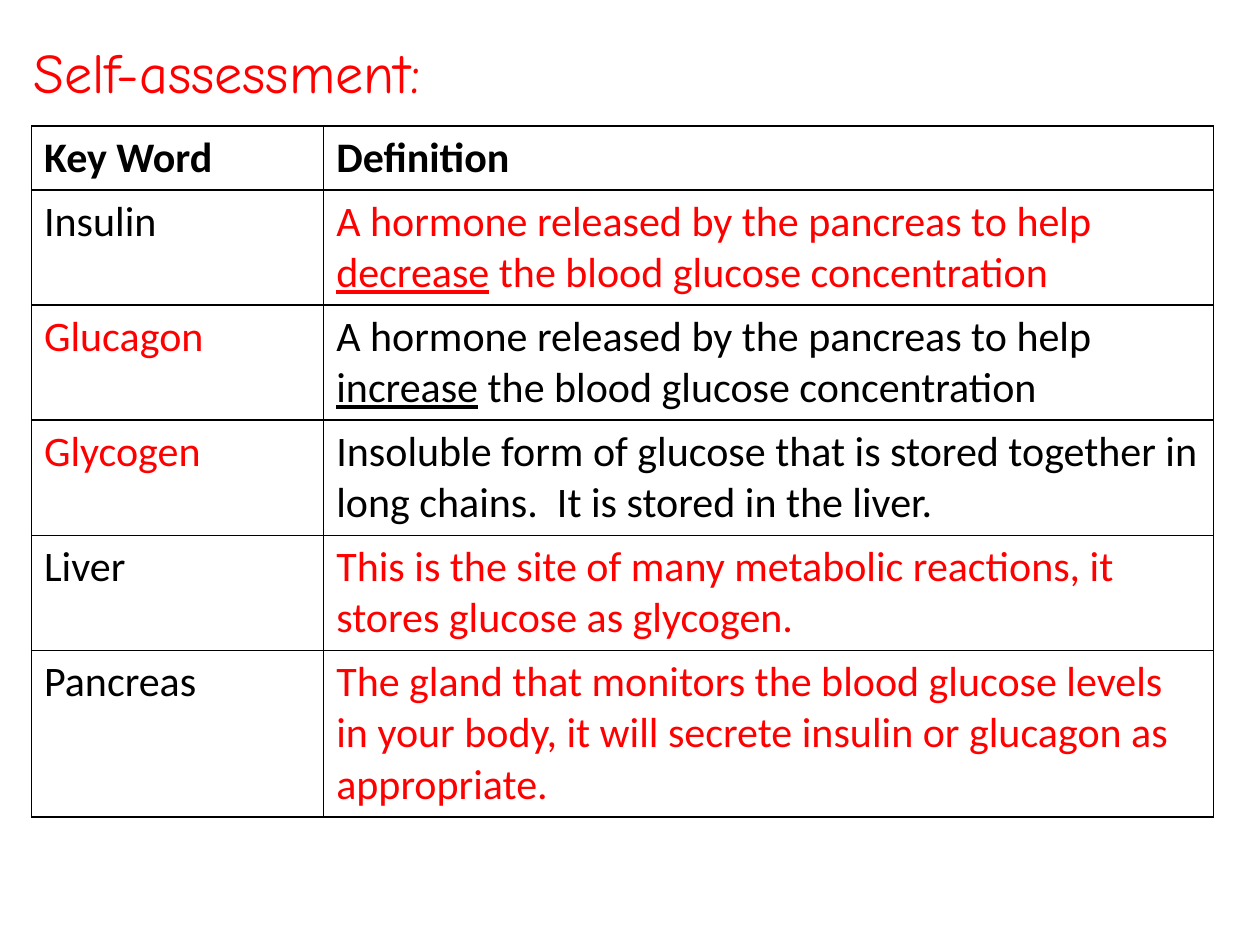
"""Build a self-assessment slide with a table of blood glucose key words."""
import pptx
import pptx.dml.color
import pptx.enum.text
import pptx.oxml
import pptx.oxml.ns
import pptx.util

Pt = pptx.util.Pt

COLOURS = {"given": "000000", "answer": "FF0000", "border": "000000"}
TITLE = "Self-assessment:"
HEADINGS = ("Key Word", "Definition")
ENTRIES = [
    (("given", ["Insulin"]),
     ("answer", ["A hormone released by the pancreas to help ", "decrease",
                 " the blood glucose concentration"])),
    (("answer", ["Glucagon"]),
     ("given", ["A hormone released by the pancreas to help ", "increase",
                " the blood glucose concentration"])),
    (("answer", ["Glycogen"]),
     ("given", ["Insoluble form of glucose that is stored together in long chains.  "
                "It is stored in the liver."])),
    (("given", ["Liver"]),
     ("answer", ["This is the site of many metabolic reactions, "
                 "it stores glucose as glycogen."])),
    (("given", ["Pancreas"]),
     ("answer", ["The gland that monitors the blood glucose levels in your body, "
                 "it will secrete insulin or glucagon as appropriate."])),
]
COLUMN_WIDTHS = (167, 508.5)
ROW_HEIGHTS = (36, 58.3, 58.3, 58.3, 58.3, 82)
TABLE_LEFT, TABLE_TOP = 18, 72


def add_run(paragraph, text, font_name, size, role, bold=False, underline=False):
    run = paragraph.add_run()
    run.text = text
    run.font.name = font_name
    run.font.size = Pt(size)
    run.font.bold = bold
    run.font.underline = underline
    run.font.color.rgb = pptx.dml.color.RGBColor.from_string(COLOURS[role])


def add_borders(cell):
    properties = cell._tc.get_or_add_tcPr()
    for position, side in enumerate(("lnL", "lnR", "lnT", "lnB")):
        properties.insert(position, pptx.oxml.parse_xml(
            f'<a:{side} {pptx.oxml.ns.nsdecls("a")} w="{Pt(1)}"><a:solidFill>'
            f'<a:srgbClr val="{COLOURS["border"]}"/></a:solidFill></a:{side}>'))


def add_title(slide):
    shape = slide.shapes.add_textbox(Pt(12.2), Pt(18), Pt(306), Pt(46))
    frame = shape.text_frame
    frame.word_wrap = True
    frame.auto_size = pptx.enum.text.MSO_AUTO_SIZE.SHAPE_TO_FIT_TEXT
    add_run(frame.paragraphs[0], TITLE, "Comic Neue", 32, "answer")


def add_definitions(slide):
    rows = [[("given", [heading]) for heading in HEADINGS], *ENTRIES]
    table = slide.shapes.add_table(
        len(rows), len(HEADINGS), Pt(TABLE_LEFT), Pt(TABLE_TOP),
        Pt(sum(COLUMN_WIDTHS)), Pt(sum(ROW_HEIGHTS))).table
    table.first_row = False
    table.horz_banding = False
    for column, width in zip(table.columns, COLUMN_WIDTHS):
        column.width = Pt(width)
    for row, height in zip(table.rows, ROW_HEIGHTS):
        row.height = Pt(height)
    for row_index, entry in enumerate(rows):
        for column_index, (role, pieces) in enumerate(entry):
            cell = table.cell(row_index, column_index)
            cell.fill.background()
            add_borders(cell)
            paragraph = cell.text_frame.paragraphs[0]
            for piece_index, piece in enumerate(pieces):
                add_run(paragraph, piece, "Calibri", 24, role,
                        bold=row_index == 0, underline=piece_index == 1)


def main():
    presentation = pptx.Presentation()
    presentation.slide_width, presentation.slide_height = Pt(720), Pt(540)
    slide = presentation.slides.add_slide(presentation.slide_layouts[6])
    add_definitions(slide)
    add_title(slide)
    presentation.save("out.pptx")


if __name__ == "__main__":
    main()
